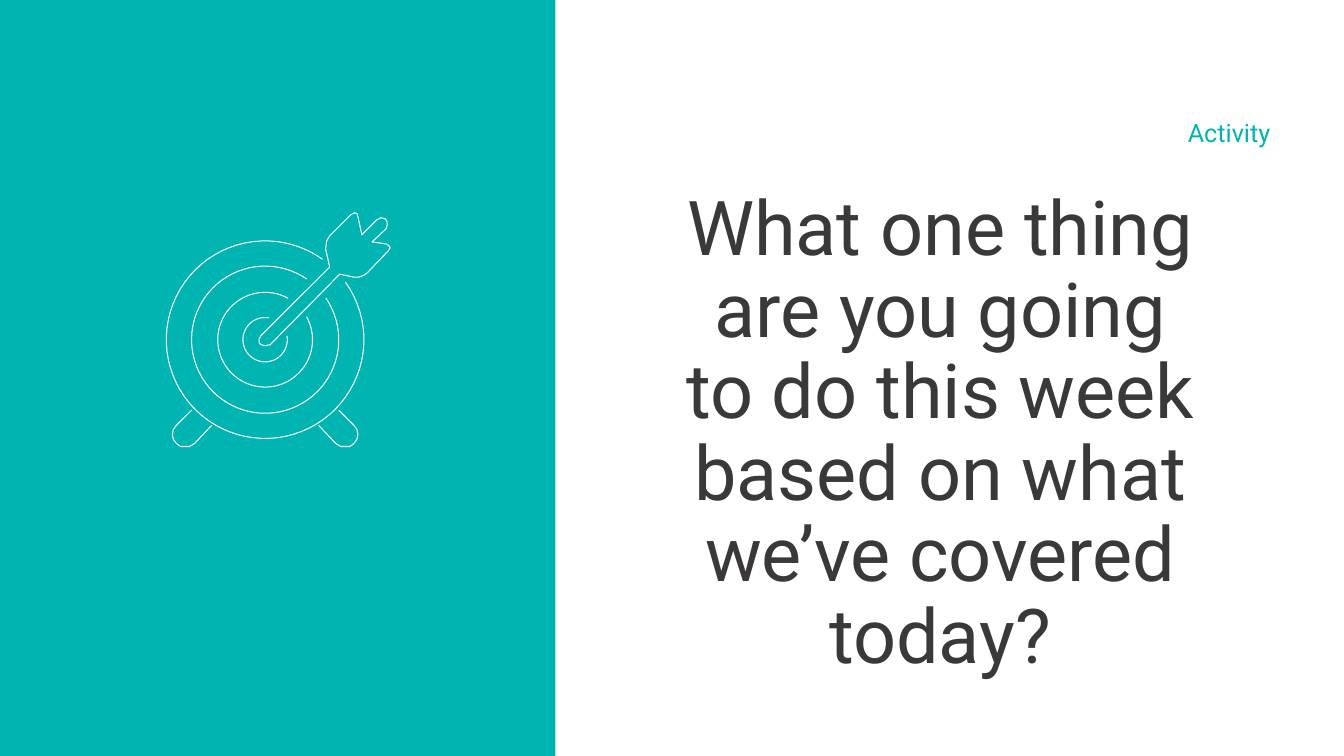
"""Build the activity slide with its target drawing and closing question."""
import math

import pptx
import pptx.dml.color
import pptx.enum.text
import pptx.util

Inches = pptx.util.Inches
TEAL = pptx.dml.color.RGBColor(0x00, 0xB4, 0xB1)
CHARCOAL = pptx.dml.color.RGBColor(0x3B, 0x38, 0x38)
WHITE = pptx.dml.color.RGBColor(0xFF, 0xFF, 0xFF)

SLIDE_SIZE = (13.33, 7.5)
PANEL = (0, 0, 5.51, 7.5)
TEXTS = [
    {
        "text": "What one thing are you going to do this week based on what we’ve covered today?",
        "place": (6.57, 3.72, 5.51, 1.19),
        "spacing": 0.9,
        "font": {"name": "Roboto", "size": pptx.util.Pt(54)},
        "color": CHARCOAL,
    },
    {
        "text": "Activity",
        "place": (10.92, 1.11, 2.54, 0.4),
        "spacing": 1.0,
        "font": {"name": "Roboto", "size": pptx.util.Pt(18)},
        "color": TEAL,
    },
]

CENTER = (2.63, 3.37)
ARROW_ANGLE = 45
RING_STEPS = 72
RINGS = [(0.98, 9.5), (0.73, 10.5), (0.22, 35), (0.47, 16)]
LEFT_LEG = [
    (1.9, 4.07), (1.75, 4.22), (1.72, 4.26), (1.71, 4.31), (1.72, 4.36),
    (1.75, 4.4), (1.79, 4.43), (1.83, 4.43), (1.88, 4.43), (1.93, 4.4), (2.1, 4.22),
]
ARROW = [
    (3.83, 2.42), (3.69, 2.4), (3.83, 2.27), (3.84, 2.24), (3.84, 2.2),
    (3.82, 2.17), (3.78, 2.16), (3.74, 2.18), (3.59, 2.33), (3.55, 2.15),
    (3.54, 2.12), (3.52, 2.11), (3.48, 2.13), (3.27, 2.34), (3.24, 2.39),
    (3.23, 2.47), (3.27, 2.65), (2.59, 3.33), (2.57, 3.36), (2.57, 3.4),
    (2.59, 3.42), (2.63, 3.43), (2.68, 3.42), (3.37, 2.72), (3.51, 2.75),
    (3.56, 2.75), (3.61, 2.73), (3.64, 2.71), (3.85, 2.49), (3.87, 2.46),
    (3.86, 2.44),
]


def ring_points(radius, half_gap):
    """Return points along a ring left open on both sides of the arrow."""
    sweep = 360 - 2 * half_gap
    angles = [
        math.radians(ARROW_ANGLE + half_gap + sweep * step / RING_STEPS)
        for step in range(RING_STEPS + 1)
    ]
    return [
        (CENTER[0] + radius * math.cos(angle), CENTER[1] - radius * math.sin(angle))
        for angle in angles
    ]


def add_outline(shapes, points, close=False):
    """Draw a thin white outline through points given in inches."""
    places = [(Inches(x), Inches(y)) for x, y in points]
    builder = shapes.build_freeform(*places[0])
    builder.add_line_segments(places[1:], close=close)
    outline = builder.convert_to_shape()
    outline.shadow.inherit = False
    outline.fill.background()
    outline.line.color.rgb = WHITE
    outline.line.width = pptx.util.Pt(0.75)


def add_text(page, item):
    """Add one centred text box."""
    box = page.shapes.add_textbox(*map(Inches, item["place"]))
    frame = box.text_frame
    frame.word_wrap = True
    frame.vertical_anchor = pptx.enum.text.MSO_ANCHOR.MIDDLE
    para = frame.paragraphs[0]
    para.alignment = pptx.enum.text.PP_ALIGN.CENTER
    para.line_spacing = item["spacing"]
    span = para.add_run()
    span.text = item["text"]
    for name, value in item["font"].items():
        setattr(span.font, name, value)
    span.font.color.rgb = item["color"]


def main():
    """Assemble and save the deck."""
    deck = pptx.Presentation()
    deck.slide_width, deck.slide_height = map(Inches, SLIDE_SIZE)
    page = deck.slides.add_slide(deck.slide_layouts[6])

    for item in TEXTS:
        add_text(page, item)

    panel = page.shapes.add_shape(
        pptx.enum.shapes.MSO_SHAPE.RECTANGLE, *map(Inches, PANEL)
    )
    panel.shadow.inherit = False
    panel.fill.solid()
    panel.fill.fore_color.rgb = TEAL
    panel.line.fill.background()

    target = page.shapes.add_group_shape()
    right_leg = [(2 * CENTER[0] - x, y) for x, y in LEFT_LEG]
    for points in [ring_points(*ring) for ring in RINGS] + [LEFT_LEG, right_leg]:
        add_outline(target.shapes, points)
    add_outline(target.shapes, ARROW, close=True)

    deck.save("out.pptx")


if __name__ == "__main__":
    main()
